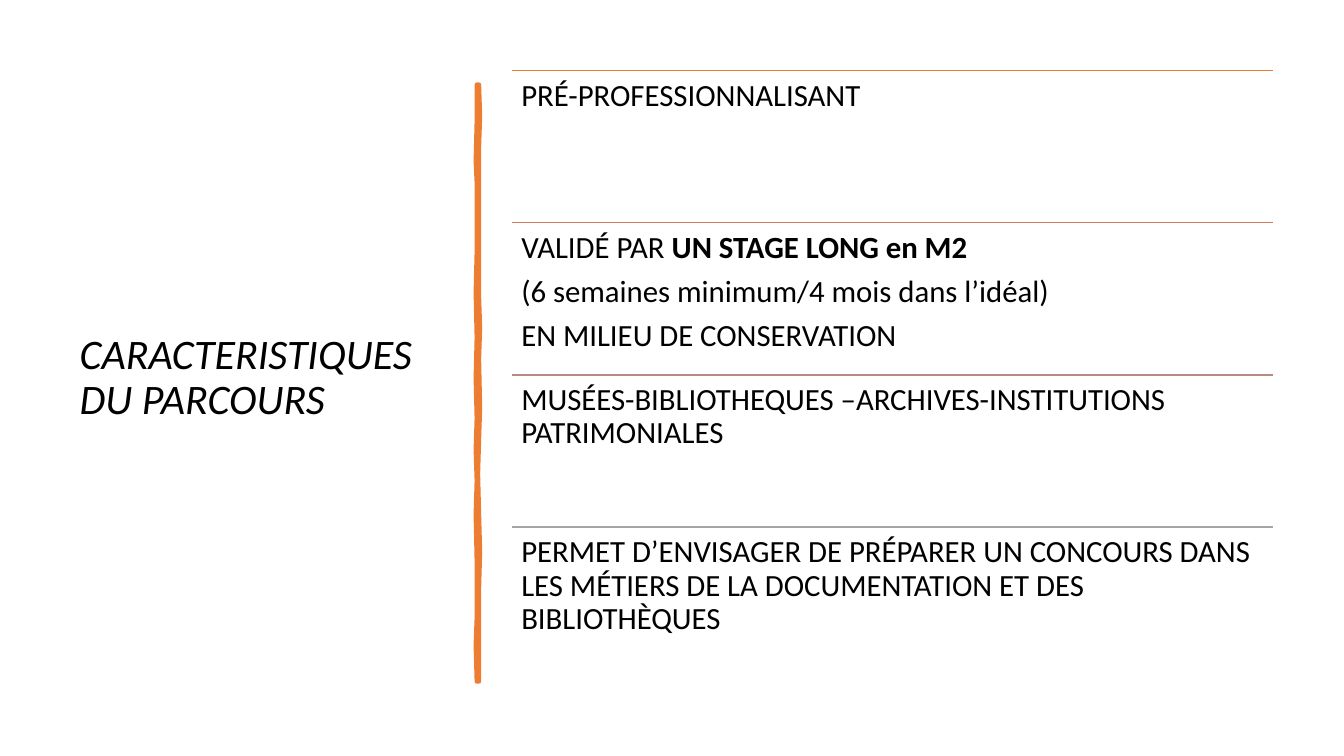
from dataclasses import dataclass

from lxml import etree
from pptx import Presentation
from pptx.dml.color import RGBColor
from pptx.enum import shapes, text
from pptx.oxml import ns
from pptx.util import Inches, Pt


@dataclass(frozen=True)
class Theme:
    font: str = "Calibri"
    ink: RGBColor = RGBColor.from_string("000000")
    accent: RGBColor = RGBColor.from_string("ED7D31")
    rules: tuple = ("ED7D31", "D17B5C", "B98A82", "A5A5A5")
    title_size: int = 30
    body_size: int = 22


theme = Theme()


def style_run(run, size, bold=False, italic=False):
    run.font.name = theme.font
    run.font.size = Pt(size)
    run.font.color.rgb = theme.ink
    run.font.bold = bold
    run.font.italic = italic


presentation = Presentation()
presentation.slide_width = Inches(13.33)
presentation.slide_height = Inches(7.5)
slide = presentation.slides.add_slide(presentation.slide_layouts[5])

# Title
title = slide.shapes.title
title.left, title.top = Inches(0.69), Inches(0.7)
title.width, title.height = Inches(3.74), Inches(6.11)
title_frame = title.text_frame
title_frame.text = "CARACTERISTIQUES DU PARCOURS"
title_frame.word_wrap = True
title_frame.auto_size = text.MSO_AUTO_SIZE.NONE
title_frame.vertical_anchor = text.MSO_ANCHOR.MIDDLE
title_paragraph = title_frame.paragraphs[0]
title_paragraph.alignment = text.PP_ALIGN.LEFT
title_paragraph.line_spacing = 0.9
style_run(title_paragraph.runs[0], theme.title_size, italic=True)

# Hand-drawn vertical bar: down the right edge, up the left edge
right_edge = [(4.75, 0.84), (4.76, 1.15), (4.75, 1.46), (4.75, 2.94), (4.76, 3.25),
              (4.75, 3.56), (4.76, 4.05), (4.75, 4.36), (4.74, 4.7), (4.75, 5.1),
              (4.76, 5.47), (4.75, 5.84), (4.75, 6.76)]
left_edge = [(4.73, 6.76), (4.72, 6.4), (4.73, 6.13), (4.73, 5.57), (4.72, 5.1),
             (4.73, 4.77), (4.72, 4.46), (4.73, 4.15), (4.72, 3.75), (4.73, 3.35),
             (4.72, 2.9), (4.73, 2.5), (4.73, 1.81), (4.72, 1.6), (4.73, 1.2),
             (4.73, 0.84)]
outline = [(Inches(x), Inches(y)) for x, y in right_edge + left_edge]
builder = slide.shapes.build_freeform(*outline[0])
builder.add_line_segments(outline[1:], close=True)
bar = builder.convert_to_shape()
bar.shadow.inherit = False
bar.fill.solid()
bar.fill.fore_color.rgb = theme.accent
bar.line.color.rgb = theme.accent
bar.line.width = Pt(3.25)

# Ruled sections: each paragraph is a list of (wording, bold) runs
sections = [
    [[("PRÉ-PROFESSIONNALISANT", False)]],
    [[("VALIDÉ PAR ", False), ("UN STAGE LONG en M2", True)],
     [("(6 semaines minimum/4 mois dans l’idéal)", False)],
     [("EN MILIEU DE CONSERVATION", False)]],
    [[("MUSÉES-BIBLIOTHEQUES –ARCHIVES-INSTITUTIONS PATRIMONIALES", False)]],
    [[("PERMET D’ENVISAGER DE PRÉPARER UN CONCOURS DANS LES MÉTIERS "
       "DE LA DOCUMENTATION ET DES BIBLIOTHÈQUES", False)]],
]
left, width = Inches(5.08), Inches(7.55)
first_top, row_height = Inches(0.7), Inches(1.51)
inset = Inches(0.09)

for row, (section, rule_color) in enumerate(zip(sections, theme.rules)):
    top = first_top + row * row_height

    rule = slide.shapes.add_connector(
        shapes.MSO_CONNECTOR.STRAIGHT, left, top, left + width, top)
    rule.line.color.rgb = RGBColor.from_string(rule_color)
    rule.line.width = Pt(1)
    etree.SubElement(rule._element.spPr, ns.qn("a:effectLst"))

    box = slide.shapes.add_textbox(left, top, width, row_height)
    frame = box.text_frame
    frame.word_wrap = True
    frame.margin_left = frame.margin_right = inset
    frame.margin_top = frame.margin_bottom = inset
    for index, pieces in enumerate(section):
        paragraph = frame.add_paragraph() if index else frame.paragraphs[0]
        paragraph.line_spacing = 0.9
        paragraph.space_after = Pt(0.35 * theme.body_size)
        for wording, bold in pieces:
            run = paragraph.add_run()
            run.text = wording
            style_run(run, theme.body_size, bold=bold)

presentation.save("out.pptx")
